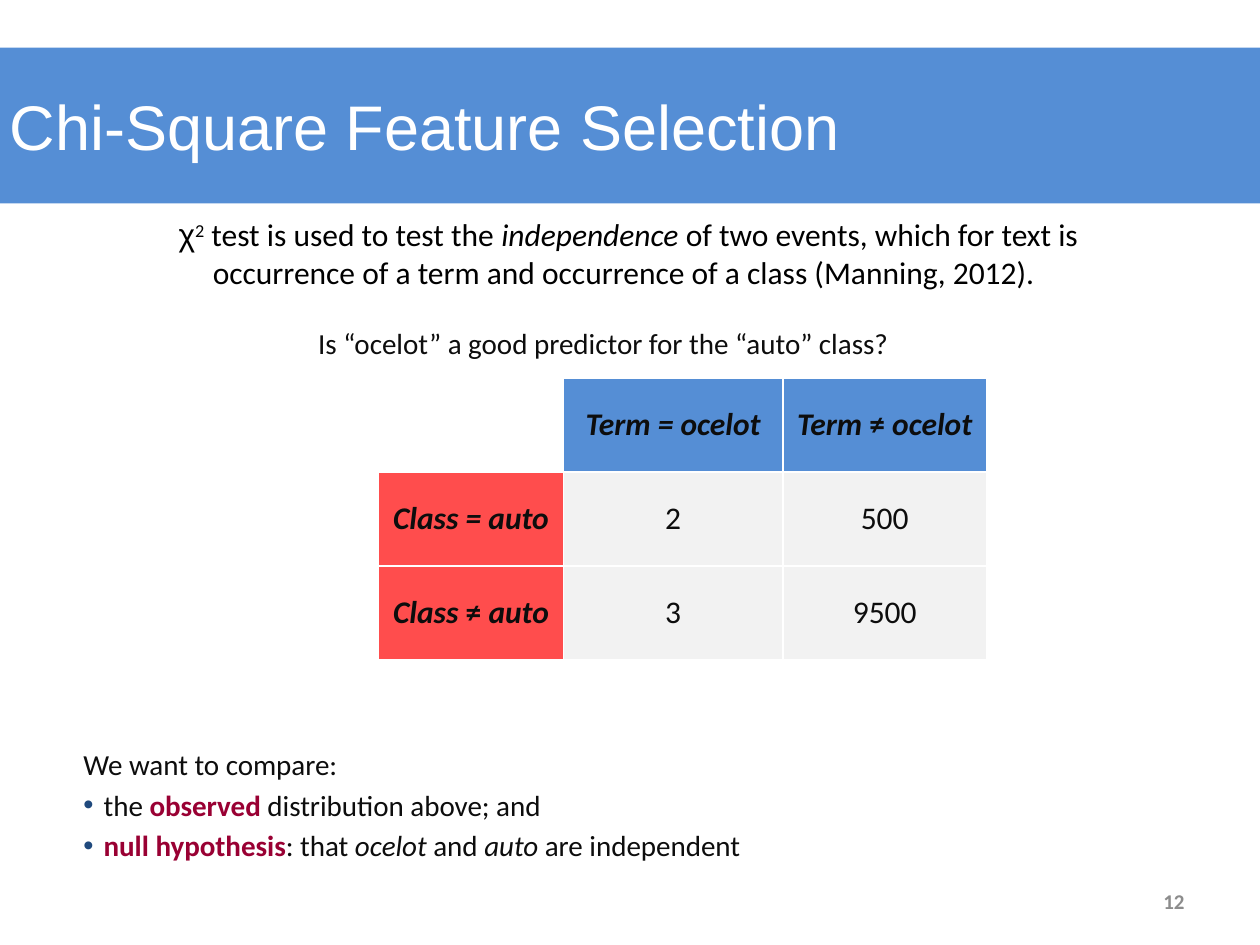
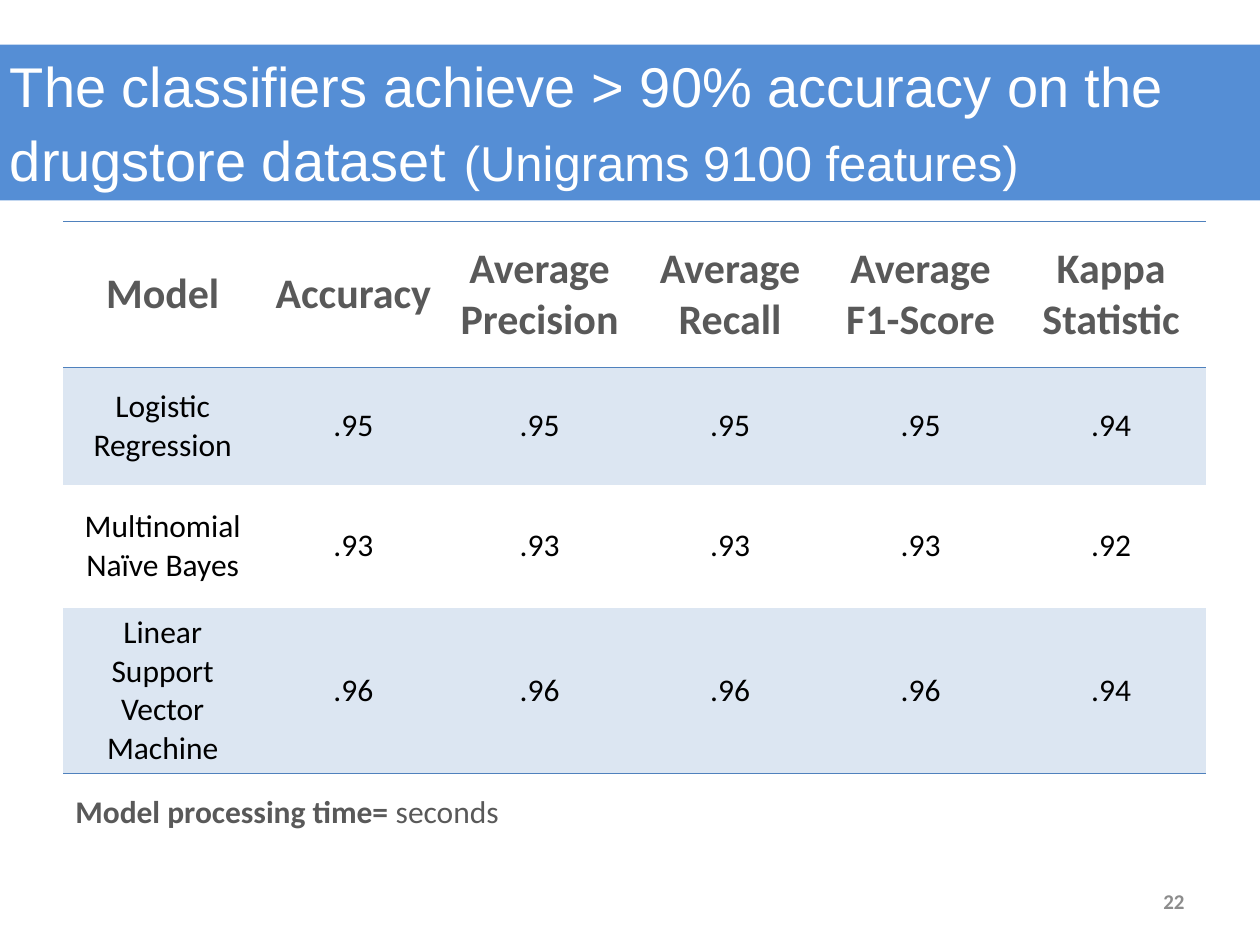
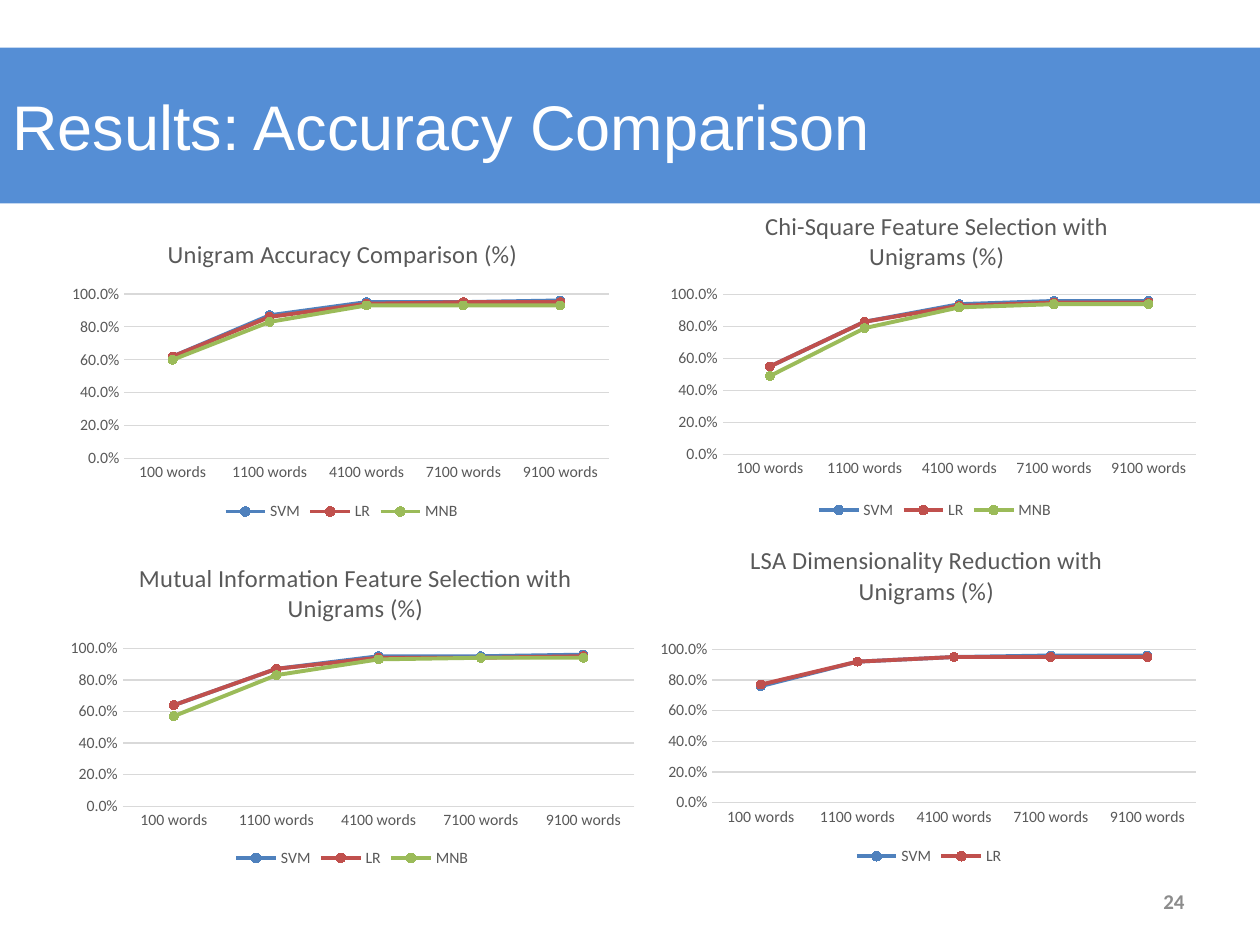
from pptx import Presentation
from pptx.chart.data import CategoryChartData
from pptx.dml.color import RGBColor
from pptx.enum.chart import XL_CHART_TYPE, XL_LEGEND_POSITION, XL_MARKER_STYLE, XL_TICK_MARK
from pptx.enum.text import MSO_ANCHOR, MSO_AUTO_SIZE, PP_ALIGN
from pptx.oxml import parse_xml
from pptx.oxml.ns import nsdecls, qn
from pptx.util import Cm, Pt

BAND = RGBColor(0x55, 0x8E, 0xD5)
WHITE = RGBColor(0xFF, 0xFF, 0xFF)
BLACK = RGBColor(0, 0, 0)
INK = RGBColor(0x0D, 0x0D, 0x0D)
GREY = RGBColor(0x59, 0x59, 0x59)
NUMBER_GREY = RGBColor(0x8C, 0x8C, 0x8C)
GRID = RGBColor(0xD9, 0xD9, 0xD9)
CRIMSON = RGBColor(0x99, 0x00, 0x33)
NAVY = RGBColor(0x1F, 0x49, 0x7D)
RED = RGBColor(0xFF, 0x4D, 0x4D)
PALE = RGBColor(0xF2, 0xF2, 0xF2)
STRIPE = RGBColor(0xDC, 0xE6, 0xF2)
BLUE = RGBColor(0x4F, 0x81, 0xBD)
SERIES_COLORS = [BLUE, RGBColor(0xC0, 0x50, 0x4D), RGBColor(0x9B, 0xBB, 0x59)]
NO_STYLE = "{2D5ABB26-0587-4C30-8999-92F81FD0307C}"

TITLE = dict(name="Arial", size=Pt(36), color=WHITE)
BODY = dict(name="Calibri", size=Pt(16.6), color=INK)
TEXT = dict(name="Calibri", size=Pt(18), color=BLACK)
BOLD, ITALIC, PLAIN = dict(bold=True), dict(italic=True), dict(italic=False)
KEY = dict(bold=True, color=CRIMSON)


def write(tf, paras, fmt, align=PP_ALIGN.LEFT):
    """Fill a text frame; a paragraph is a string or a list of (text, changes)."""
    tf.word_wrap = True
    for i, para in enumerate(paras):
        p = tf.paragraphs[0] if i == 0 else tf.add_paragraph()
        p.alignment = align
        if i == 0:
            p.space_before = Pt(0)
        for text, changes in [(para, {})] if isinstance(para, str) else para:
            r = p.add_run()
            r.text = text
            for key, value in {**fmt, **changes}.items():
                if key == "color":
                    r.font.color.rgb = value
                elif key == "baseline":
                    r.font._element.set(key, value)
                else:
                    setattr(r.font, key, value)


def add_grid(s, left, top, cols, rows, cells):
    """Add a table; a cell is (paragraphs, format, fill, border sides, border colour)."""
    tbl = s.shapes.add_table(len(rows), len(cols), Cm(left), Cm(top),
                             Cm(sum(cols)), Cm(sum(rows))).table
    tbl._tbl.tblPr.find(qn("a:tableStyleId")).text = NO_STYLE
    tbl.first_row = tbl.horz_banding = False
    for lines, sizes, attr in ((tbl.columns, cols, "width"), (tbl.rows, rows, "height")):
        for line, size in zip(lines, sizes):
            setattr(line, attr, Cm(size))
    for cell, (paras, fmt, fill, sides, color) in zip(tbl.iter_cells(), cells):
        cell.vertical_anchor = MSO_ANCHOR.MIDDLE
        cell.margin_left = cell.margin_right = Cm(0.18)
        write(cell.text_frame, paras, fmt, PP_ALIGN.CENTER)
        for i, side in enumerate(sides):
            cell._tc.get_or_add_tcPr().insert(i, parse_xml(
                f'<a:ln{side} {nsdecls("a")} w="12700"><a:solidFill>'
                f'<a:srgbClr val="{color}"/></a:solidFill></a:ln{side}>'))
        if fill is None:
            cell.fill.background()
        else:
            cell.fill.solid()
            cell.fill.fore_color.rgb = fill


prs = Presentation()
prs.slide_width, prs.slide_height = Cm(25.4), Cm(19.05)

# Title bands and slide numbers
headers = [
    (1, -0.05, 0.96, "12", "Chi-Square Feature Selection"),
    (5, -0.05, 0.9, "22", [
        ("The classifiers achieve > 90% accuracy on the drugstore dataset", dict(size=Pt(32))),
        (" ", {}), ("(Unigrams 9100 features)", dict(size=Pt(28)))]),
    (5, 0, 0.96, "24", "Results: Accuracy Comparison"),
]
for layout, left, top, number, title in headers:
    s = prs.slides.add_slide(prs.slide_layouts[layout])
    sp = s.shapes.title
    sp.left, sp.top, sp.width, sp.height = Cm(left), Cm(top), Cm(25.45), Cm(3.14)
    sp.fill.solid()
    sp.fill.fore_color.rgb = BAND
    tf = sp.text_frame
    for side in ("left", "right", "top", "bottom"):
        setattr(tf, f"margin_{side}", Cm(0.25))
    tf.auto_size = MSO_AUTO_SIZE.NONE
    tf.vertical_anchor = MSO_ANCHOR.MIDDLE
    write(tf, [title], TITLE)
    tf = s.shapes.add_textbox(Cm(18.2), Cm(17.65), Cm(5.93), Cm(1.02)).text_frame
    tf.vertical_anchor = MSO_ANCHOR.MIDDLE
    write(tf, [number], dict(name="Calibri", size=Pt(12), bold=True, color=NUMBER_GREY),
          PP_ALIGN.RIGHT)
chi_slide, scores_slide, charts_slide = prs.slides

# Chi-square: introduction and question
tf = chi_slide.shapes.add_textbox(Cm(3.35), Cm(4.22), Cm(19.18), Cm(1.8)).text_frame
write(tf, [[("χ", dict(name="Arial")), ("2", dict(baseline="30000")),
            (" test is used to test the ", {}), ("independence", ITALIC),
            (" of two events, which for text is occurrence of a term and "
             "occurrence of a class (Manning, 2012).", {})]], TEXT)
pPr = tf.paragraphs[0]._p.get_or_add_pPr()
pPr.set("marL", str(Cm(0.69)))
pPr.set("indent", str(Cm(-0.69)))
tf = chi_slide.shapes.add_textbox(Cm(1.68), Cm(6.44), Cm(20.95), Cm(0.9)).text_frame
write(tf, ["Is “ocelot” a good predictor for the “auto” class?"], BODY, PP_ALIGN.CENTER)

# Chi-square: contingency table
HEAD = dict(TEXT, color=INK, bold=True, italic=True)
VALUE = dict(TEXT, color=INK)
contingency = [
    ([], HEAD, None),
    (["Term = ocelot"], HEAD, BAND),
    ([[("Term ", {}), ("≠ ", PLAIN), ("ocelot", {})]], HEAD, BAND),
    (["Class = auto"], HEAD, RED), (["2"], VALUE, PALE), (["500"], VALUE, PALE),
    ([[("Class ", {}), ("≠ ", PLAIN), ("auto", {})]], HEAD, RED),
    (["3"], VALUE, PALE), (["9500"], VALUE, PALE),
]
add_grid(chi_slide, 7.63, 7.63, [3.73, 4.42, 4.11], [1.88, 1.9, 1.88],
         [(*cell, "LRTB", WHITE) for cell in contingency])

# Chi-square: what is compared
sp = chi_slide.placeholders[1]
sp.left, sp.top, sp.width, sp.height = Cm(1.68), Cm(15.05), Cm(20.95), Cm(2.5)
tf = sp.text_frame
tf.margin_left = tf.margin_right = tf.margin_top = tf.margin_bottom = 0
tf.auto_size = MSO_AUTO_SIZE.NONE
write(tf, [
    "We want to compare:",
    [("the ", {}), ("observed", KEY), (" distribution above; and", {})],
    [("null hypothesis", KEY), (": that ", {}), ("ocelot", ITALIC), (" and ", {}),
     ("auto", ITALIC), (" are independent", {})],
], BODY)
for i, p in enumerate(tf.paragraphs):
    pPr = p._p.get_or_add_pPr()
    indent = Cm(0.41) if i else 0
    pPr.set("marL", str(indent))
    pPr.set("indent", str(-indent))
    if i:
        pPr.append(parse_xml(f'<a:buClr {nsdecls("a")}><a:srgbClr val="{NAVY}"/></a:buClr>'))
        pPr.append(parse_xml(f'<a:buChar {nsdecls("a")} char="•"/>'))
    else:
        pPr.append(parse_xml(f'<a:buNone {nsdecls("a")}/>'))

# Classifier scores
scores = [
    [["Model"], ["Accuracy"], ["Average", "Precision"], ["Average", "Recall"],
     ["Average", "F1-Score"], ["Kappa", "Statistic"]],
    [["Logistic Regression"], [".95"], [".95"], [".95"], [".95"], [".94"]],
    [["Multinomial", "Naïve Bayes"], [".93"], [".93"], [".93"], [".93"], [".92"]],
    [["Linear Support Vector", "Machine"], [".96"], [".96"], [".96"], [".96"], [".94"]],
]
SCORE_HEAD = dict(TEXT, size=Pt(24), color=GREY, bold=True)
rules = ["TB", "", "", "B"]
add_grid(scores_slide, 1.27, 4.47, [4.02, 3.67] + [3.84] * 4, [2.94, 2.36, 2.48, 3.34],
         [(paras, TEXT if i else SCORE_HEAD, STRIPE if i % 2 else None, rules[i], BLUE)
          for i, row in enumerate(scores) for paras in row])
tf = scores_slide.shapes.add_textbox(Cm(1.27), Cm(15.85), Cm(9.96), Cm(1.02)).text_frame
write(tf, [[("Model processing time= ", BOLD), ("seconds", {})]], dict(TEXT, color=GREY))

# Accuracy charts: place, title corner, plot top and height, values
words = [f"{n} words" for n in (100, 1100, 4100, 7100, 9100)]
charts = [
    ("Unigram Accuracy Comparison (%)", (1.27, 4.45, 11.23, 6.15), (0.18, 0.04), (0.24, 0.54),
     [(0.62, 0.87, 0.95, 0.95, 0.96), (0.62, 0.86, 0.94, 0.95, 0.95),
      (0.6, 0.83, 0.93, 0.93, 0.93)]),
    ("Chi-Square Feature Selection with Unigrams (%)", (13.36, 3.86, 10.97, 6.71),
     (0.18, 0.04), (0.31, 0.48),
     [(0.55, 0.83, 0.94, 0.96, 0.96), (0.55, 0.83, 0.93, 0.95, 0.95),
      (0.49, 0.79, 0.92, 0.94, 0.94)]),
    ("Mutual Information Feature Selection with Unigrams (%)", (1.17, 10.95, 11.86, 6.63),
     (0.13, 0.04), (0.32, 0.48),
     [(0.64, 0.87, 0.95, 0.95, 0.96), (0.64, 0.87, 0.94, 0.94, 0.95),
      (0.57, 0.83, 0.93, 0.94, 0.94)]),
    ("LSA Dimensionality Reduction with Unigrams (%)", (13.13, 10.36, 11.2, 7.19),
     (0.17, 0.07), (0.38, 0.43),
     [(0.76, 0.92, 0.95, 0.96, 0.96), (0.77, 0.92, 0.95, 0.95, 0.95)]),
]
for title, place, (title_x, title_y), (plot_y, plot_h), values in charts:
    data = CategoryChartData(number_format="0.0%")
    data.categories = words
    for name, vals in zip(("SVM", "LR", "MNB"), values):
        data.add_series(name, vals)
    chart = charts_slide.shapes.add_chart(XL_CHART_TYPE.LINE_MARKERS, *map(Cm, place), data).chart
    chart.font.name, chart.font.size = "Calibri", Pt(10)
    chart.has_title = True
    write(chart.chart_title.text_frame, [title],
          dict(name="Calibri", size=Pt(14), bold=False, color=GREY), PP_ALIGN.CENTER)
    chart.has_legend = True
    chart.legend.position = XL_LEGEND_POSITION.BOTTOM
    chart.legend.include_in_layout = False

    # Axes
    cat, val = chart.category_axis, chart.value_axis
    val.minimum_scale, val.maximum_scale, val.major_unit = 0, 1, 0.2
    val.tick_labels.number_format = "0.0%"
    val.tick_labels.number_format_is_linked = False
    val.has_major_gridlines = True
    val.format.line.fill.background()
    for line in (cat.format.line, val.major_gridlines.format.line):
        line.color.rgb = GRID
        line.width = Pt(0.75)
    for axis in (cat, val):
        axis.major_tick_mark = axis.minor_tick_mark = XL_TICK_MARK.NONE
    for font in (cat.tick_labels.font, val.tick_labels.font, chart.legend.font):
        font.name, font.size, font.color.rgb = "Calibri", Pt(9), GREY

    # Series
    chart.plots[0].vary_by_categories = False
    for series, color in zip(chart.plots[0].series, SERIES_COLORS):
        series.smooth = False
        series.format.line.color.rgb = color
        series.format.line.width = Pt(2.25)
        series.marker.style, series.marker.size = XL_MARKER_STYLE.CIRCLE, 5
        series.marker.format.fill.solid()
        series.marker.format.fill.fore_color.rgb = color
        series.marker.format.line.color.rgb = color

    # Fixed places of title and plot
    layouts = [
        (chart.chart_title._element, 1, dict(xMode="edge", yMode="edge", x=title_x, y=title_y)),
        (chart._chartSpace.chart.plotArea, 0,
         dict(layoutTarget="inner", xMode="edge", yMode="edge",
              x=0.11, y=plot_y, w=0.87, h=plot_h)),
    ]
    for el, pos, settings in layouts:
        for old in el.findall(qn("c:layout")):
            el.remove(old)
        tags = "".join(f'<c:{k} val="{v}"/>' for k, v in settings.items())
        el.insert(pos, parse_xml(f'<c:layout {nsdecls("c")}><c:manualLayout>{tags}'
                                 '</c:manualLayout></c:layout>'))

prs.save("out.pptx")
